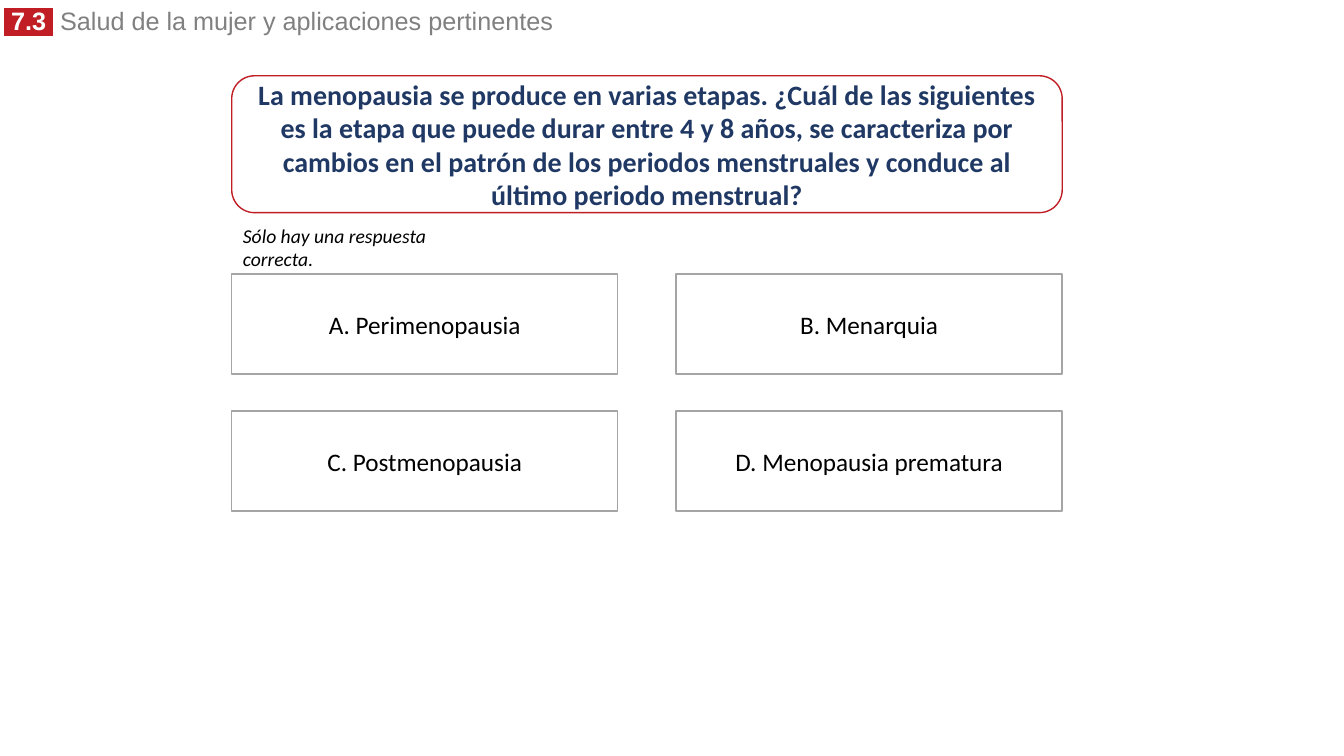
import pptx
import pptx.dml.color
import pptx.enum.shapes
import pptx.enum.text
import pptx.oxml
import pptx.oxml.ns
import pptx.util
from pptx.util import Cm

COLORS = {
    "red": "C01E24",
    "navy": "203864",
    "gray": "808080",
    "border": "A5A5A5",
    "white": "FFFFFF",
    "black": "000000",
}
SHAPES = pptx.enum.shapes.MSO_SHAPE
ALIGN = pptx.enum.text.PP_ALIGN
ANCHOR = pptx.enum.text.MSO_ANCHOR


def rgb(name):
    return pptx.dml.color.RGBColor.from_string(COLORS[name])


def style(paragraph, size, color, align, bold=False, italic=False, face="Calibri"):
    paragraph.alignment = align
    font = paragraph.font
    font.name, font.size = face, pptx.util.Pt(size)
    font.bold, font.italic = bold, italic
    font.color.rgb = rgb(color)


def add_box(slide, kind, box, text, border, size, color, bold=False):
    """White outlined box with centred text."""
    panel = slide.shapes.add_shape(kind, *box)
    panel.shadow.inherit = False
    panel.fill.solid()
    panel.fill.fore_color.rgb = rgb("white")
    panel.line.color.rgb = rgb(border)
    panel.line.width = pptx.util.Pt(1)
    frame = panel.text_frame
    frame.word_wrap = True
    frame.vertical_anchor = ANCHOR.MIDDLE
    frame.text = text
    style(frame.paragraphs[0], size, color, ALIGN.CENTER, bold)


def add_heading(slide, box, number, topic):
    heading = slide.shapes.title
    heading.left, heading.top, heading.width, heading.height = box
    frame = heading.text_frame
    frame.auto_size = pptx.enum.text.MSO_AUTO_SIZE.NONE
    frame.word_wrap = True
    frame.vertical_anchor = ANCHOR.TOP
    line = frame.paragraphs[0]
    line.line_spacing = 0.8
    style(line, 18, "gray", ALIGN.LEFT, face="Arial")

    # Section number on a red highlight
    badge = line.add_run()
    badge.text = f" {number} "
    badge.font.bold = True
    badge.font.color.rgb = rgb("white")
    highlight = pptx.oxml.parse_xml(
        f'<a:highlight {pptx.oxml.ns.nsdecls("a")}>'
        f'<a:srgbClr val="{COLORS["red"]}"/></a:highlight>')
    badge.font.fill._xPr.append(highlight)
    line.add_run().text = f" {topic}"


def add_hint(slide, box, text):
    frame = slide.shapes.add_textbox(*box).text_frame
    frame.word_wrap = True
    frame.text = text
    style(frame.paragraphs[0], 14, "black", ALIGN.LEFT, italic=True)


def add_answers(slide, box, answers, columns=2):
    """Grid of answers filling the box, lettered from A."""
    left, top, width, height = box
    cell_width, cell_height = Cm(9.73), Cm(2.52)
    rows = len(answers) // columns
    step_x = (width - cell_width) // (columns - 1)
    step_y = (height - cell_height) // (rows - 1)
    for index, (letter, answer) in enumerate(zip("ABCD", answers)):
        row, column = divmod(index, columns)
        cell = (left + column * step_x, top + row * step_y, cell_width, cell_height)
        add_box(slide, SHAPES.RECTANGLE, cell, f"{letter}. {answer}", "border", 18, "black")


def add_quiz(slide, box, question, hint, answers):
    left, top, width, height = box
    add_box(slide, SHAPES.ROUNDED_RECTANGLE, (left, top, width, Cm(3.45)),
            question, "red", 20, "navy", bold=True)
    add_hint(slide, (left + Cm(0.03), top + Cm(3.6), Cm(6), Cm(0.86)), hint)
    answers_top = Cm(5)
    add_answers(slide, (left, top + answers_top, width, height - answers_top), answers)


def main():
    deck = pptx.Presentation()
    deck.slide_width, deck.slide_height = Cm(33.87), Cm(19.05)
    slide = deck.slides.add_slide(deck.slide_layouts.get_by_name("Title Only"))
    add_heading(slide, (Cm(-0.15), Cm(0.15), Cm(16.59), Cm(0.86)),
                "7.3", "Salud de la mujer y aplicaciones pertinentes")
    add_quiz(
        slide, (Cm(5.84), Cm(1.91), Cm(20.93), Cm(10.97)),
        "La menopausia se produce en varias etapas. ¿Cuál de las siguientes es la etapa "
        "que puede durar entre 4 y 8 años, se caracteriza por cambios en el patrón de los "
        "periodos menstruales y conduce al último periodo menstrual?",
        "Sólo hay una respuesta correcta.",
        ["Perimenopausia", "Menarquia", "Postmenopausia", "Menopausia prematura"])
    deck.save("out.pptx")


if __name__ == "__main__":
    main()
